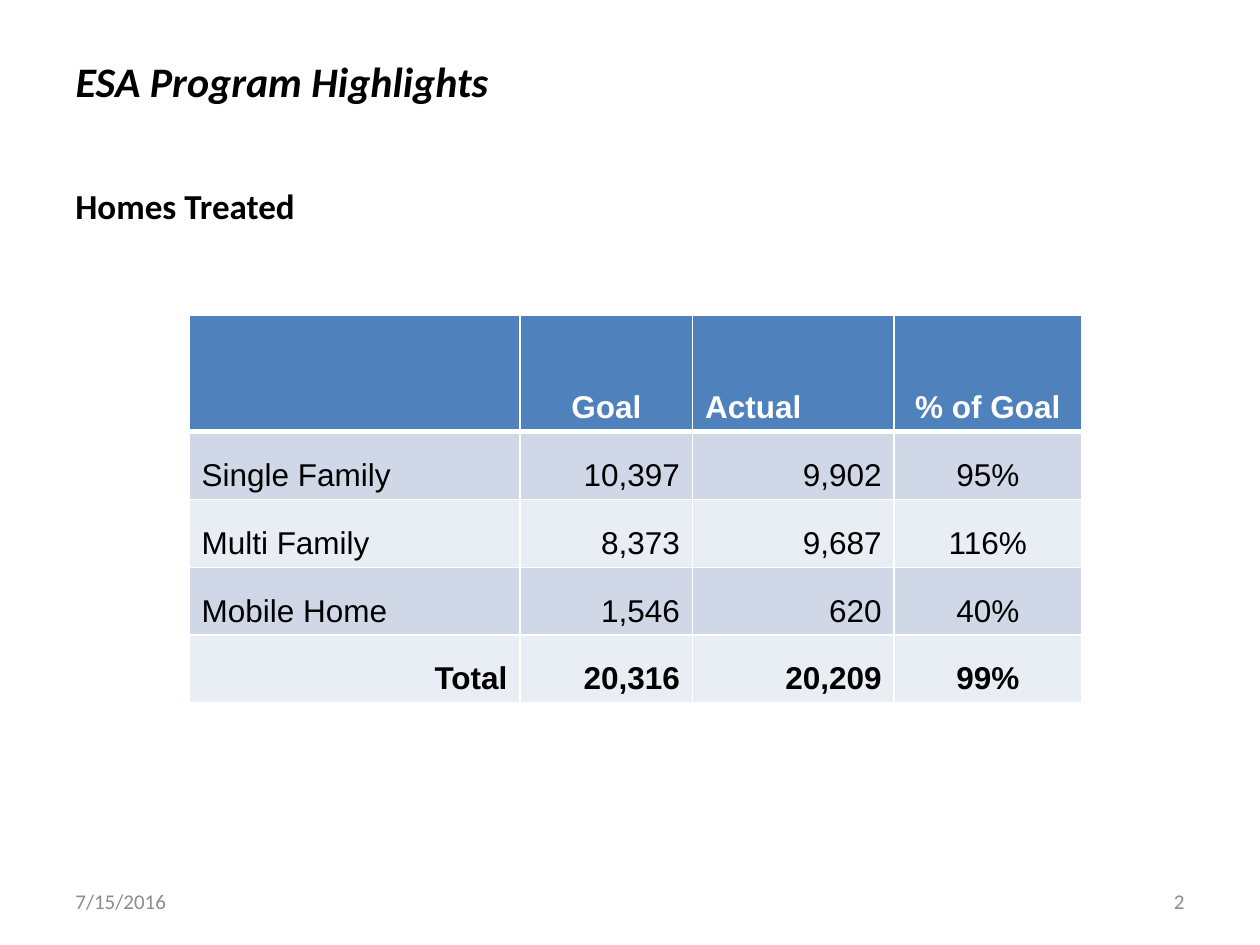
from lxml.etree import SubElement
from pptx import Presentation
from pptx.dml.color import RGBColor
from pptx.enum.text import MSO_ANCHOR, PP_ALIGN
from pptx.oxml.ns import qn
from pptx.util import Pt

BLACK = RGBColor(0x00, 0x00, 0x00)
WHITE = RGBColor(0xFF, 0xFF, 0xFF)
GREY = RGBColor(0x8C, 0x8C, 0x8C)
HEADER_BLUE = RGBColor(0x4F, 0x81, 0xBD)
BANDS = [RGBColor(0xD0, 0xD8, 0xE8), RGBColor(0xE9, 0xED, 0xF4)]

LEFT, CENTER, RIGHT = PP_ALIGN.LEFT, PP_ALIGN.CENTER, PP_ALIGN.RIGHT

TITLE_FONT = {"name": "Calibri", "size": Pt(24), "bold": True, "italic": True}
HEADING_FONT = {"name": "Calibri", "size": Pt(20), "bold": True}
FOOTER_FONT = {"name": "Calibri", "size": Pt(12)}
CELL_FONT = {"name": "Arial", "size": Pt(18)}

HOMES = [
    ["", "Goal", "Actual", "% of Goal"],
    ["Single Family", "10,397", "9,902", "95%"],
    ["Multi Family", "8,373", "9,687", "116%"],
    ["Mobile Home", "1,546", "620", "40%"],
    ["Total", "20,316", "20,209", "99%"],
]
COLUMN_WIDTHS = [189.2, 98.6, 115.2, 107]
ROW_HEIGHTS = [66.6] + [38.8] * 4
HEADER_ALIGN = [LEFT, CENTER, LEFT, CENTER]
BODY_ALIGN = [LEFT, RIGHT, RIGHT, CENTER]
TOTAL_ALIGN = [RIGHT, RIGHT, RIGHT, CENTER]


def write(frame, text, font, color, align=LEFT):
    """Write one formatted paragraph into a text frame."""
    para = frame.paragraphs[0]
    para.alignment = align
    span = para.add_run()
    span.text = text
    for key, value in font.items():
        setattr(span.font, key, value)
    span.font.color.rgb = color
    return para


def place_title(page, box, text):
    title = page.shapes.title
    title.left, title.top, title.width, title.height = map(Pt, box)
    title.text_frame.vertical_anchor = MSO_ANCHOR.MIDDLE
    write(title.text_frame, text, TITLE_FONT, BLACK)


def add_text(page, box, text, font, color, align=LEFT, anchor=MSO_ANCHOR.MIDDLE):
    frame = page.shapes.add_textbox(*map(Pt, box)).text_frame
    frame.word_wrap = True
    frame.vertical_anchor = anchor
    return write(frame, text, font, color, align)


def add_borders(cell, bottom_width):
    """Draw white cell borders; they must come before the fill."""
    properties = cell._tc.get_or_add_tcPr()
    widths = {"a:lnL": 1, "a:lnR": 1, "a:lnT": 1, "a:lnB": bottom_width}
    for index, (tag, width) in enumerate(widths.items()):
        line = SubElement(properties, qn(tag), w=str(Pt(width)))
        fill = SubElement(line, qn("a:solidFill"))
        SubElement(fill, qn("a:srgbClr"), val=str(WHITE))
        properties.insert(index, line)


def add_homes_table(page, left, top):
    size = Pt(sum(COLUMN_WIDTHS)), Pt(sum(ROW_HEIGHTS))
    table = page.shapes.add_table(
        len(HOMES), len(COLUMN_WIDTHS), Pt(left), Pt(top), *size).table
    for column, width in zip(table.columns, COLUMN_WIDTHS):
        column.width = Pt(width)
    for row, height in zip(table.rows, ROW_HEIGHTS):
        row.height = Pt(height)

    last = len(HOMES) - 1
    for r, values in enumerate(HOMES):
        header = r == 0
        aligns = HEADER_ALIGN if header else TOTAL_ALIGN if r == last else BODY_ALIGN
        font = {**CELL_FONT, "bold": r in (0, last)}
        for c, value in enumerate(values):
            cell = table.cell(r, c)
            cell.vertical_anchor = MSO_ANCHOR.BOTTOM
            cell.fill.solid()
            cell.fill.fore_color.rgb = HEADER_BLUE if header else BANDS[(r - 1) % 2]
            add_borders(cell, 3 if header else 1)
            if value:
                write(cell.text_frame, value, font,
                      WHITE if header else BLACK, aligns[c])


def add_footer(page, left, top, width, height):
    box_width = 168
    add_text(page, (left, top, box_width, height), "7/15/2016", FOOTER_FONT, GREY)
    add_text(page, (left + width - box_width, top, box_width, height),
             "2", FOOTER_FONT, GREY, RIGHT)


def main():
    deck = Presentation()
    deck.slide_width, deck.slide_height = Pt(720), Pt(540)
    page = deck.slides.add_slide(deck.slide_layouts[5])

    # Title and heading
    place_title(page, (36, 24, 468, 44.5), "ESA Program Highlights")
    heading = add_text(page, (36, 102, 540, 380), "Homes Treated",
                       HEADING_FONT, BLACK, anchor=MSO_ANCHOR.TOP)
    heading.space_after = Pt(12)

    # Goal and actual figures
    add_homes_table(page, 108, 180)

    # Date and page number
    add_footer(page, 36, 500.5, 648, 28.75)

    deck.save("out.pptx")


if __name__ == "__main__":
    main()
